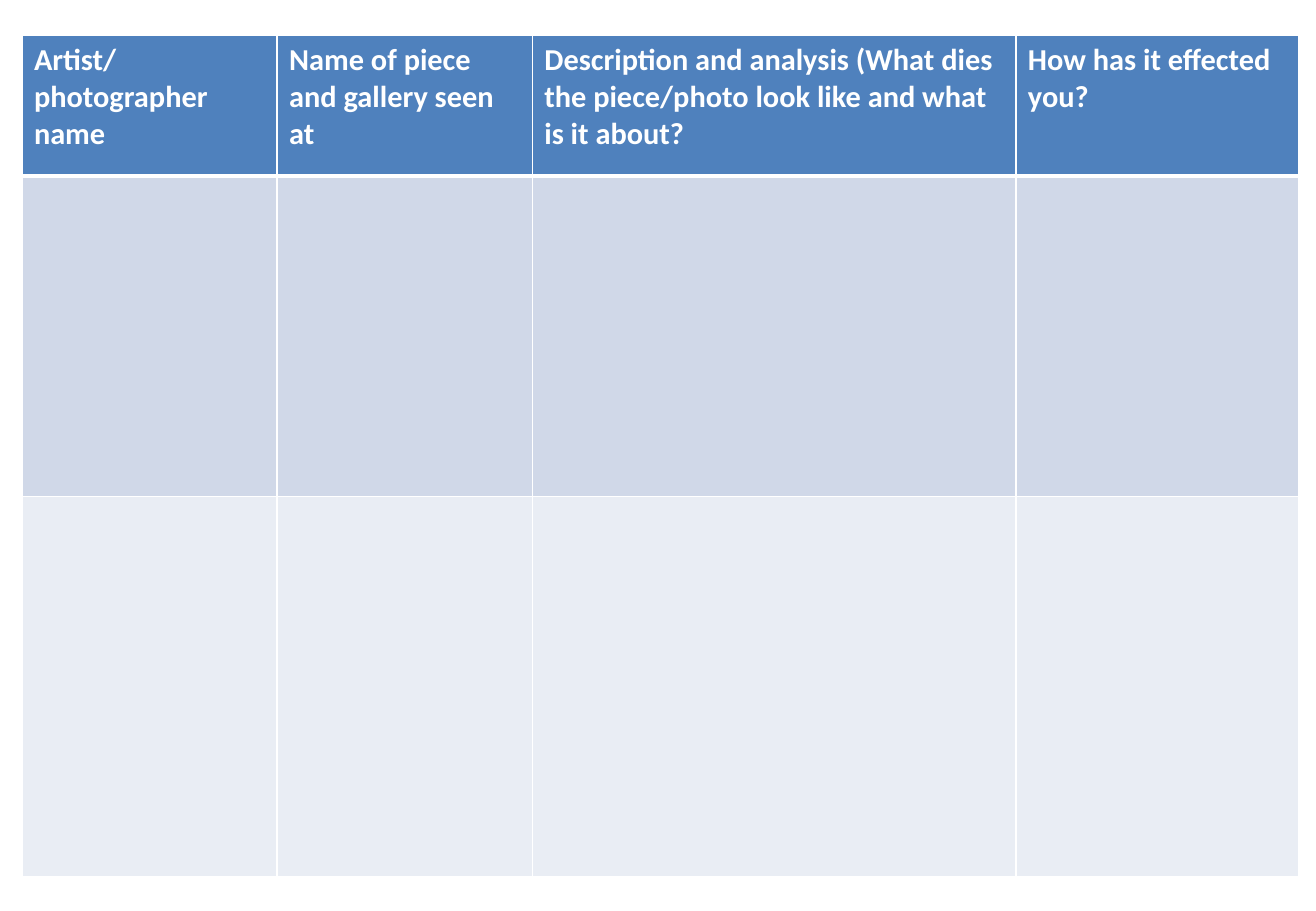
from dataclasses import dataclass

from lxml.etree import SubElement
from pptx import Presentation
from pptx.dml.color import RGBColor
from pptx.oxml.ns import qn
from pptx.slide import Slide
from pptx.table import _Cell
from pptx.util import Inches, Pt

COLORS = {
    "paper": "FFFFFF",
    "heading": "4F81BD",
    "first_entry": "D0D8E8",
    "second_entry": "E9EDF4",
}
HEADING_FORMAT = {"name": "Calibri", "size": Pt(18), "bold": True}
THIN, THICK = Pt(1), Pt(3)


@dataclass(frozen=True)
class Column:
    heading: str
    width: float


@dataclass(frozen=True)
class Row:
    color: str
    height: float
    top_border: int = THIN
    bottom_border: int = THIN


COLUMNS = [
    Column("Artist/photographer name", 2.1),
    Column("Name of piece and gallery seen at", 2.1),
    Column("Description and analysis (What dies the piece/photo look like "
           "and what is it about?", 3.98),
    Column("How has it effected you?", 2.33),
]
ROWS = [
    Row("heading", 1.16, bottom_border=THICK),
    Row("first_entry", 2.64, top_border=THICK),
    Row("second_entry", 3.13),
]


def style_cell(cell: _Cell, row: Row) -> None:
    """Draw the cell's borders, then its fill, as the schema orders them."""
    properties = cell._tc.get_or_add_tcPr()
    borders = {"a:lnL": THIN, "a:lnR": THIN,
               "a:lnT": row.top_border, "a:lnB": row.bottom_border}
    for side, width in borders.items():
        border = SubElement(properties, qn(side), w=str(int(width)))
        border_fill = SubElement(border, qn("a:solidFill"))
        SubElement(border_fill, qn("a:srgbClr"), val=COLORS["paper"])
    cell.fill.solid()
    cell.fill.fore_color.rgb = RGBColor.from_string(COLORS[row.color])


def write_heading(cell: _Cell, heading: str) -> None:
    run = cell.text_frame.paragraphs[0].add_run()
    run.text = heading
    for attribute, value in HEADING_FORMAT.items():
        setattr(run.font, attribute, value)
    run.font.color.rgb = RGBColor.from_string(COLORS["paper"])


def add_gallery_log(slide: Slide) -> None:
    total_width = sum(column.width for column in COLUMNS)
    total_height = sum(row.height for row in ROWS)
    gallery_log = slide.shapes.add_table(
        len(ROWS), len(COLUMNS), Inches(0.18), Inches(0.29),
        Inches(total_width), Inches(total_height)).table
    for index, column in enumerate(COLUMNS):
        gallery_log.columns[index].width = Inches(column.width)
        write_heading(gallery_log.cell(0, index), column.heading)
    for index, row in enumerate(ROWS):
        gallery_log.rows[index].height = Inches(row.height)
        for cell in gallery_log.rows[index].cells:
            style_cell(cell, row)


def main() -> None:
    presentation = Presentation()
    presentation.slide_width = Inches(10.83)
    presentation.slide_height = Inches(7.5)
    add_gallery_log(presentation.slides.add_slide(presentation.slide_layouts[6]))
    presentation.save("out.pptx")


if __name__ == "__main__":
    main()
